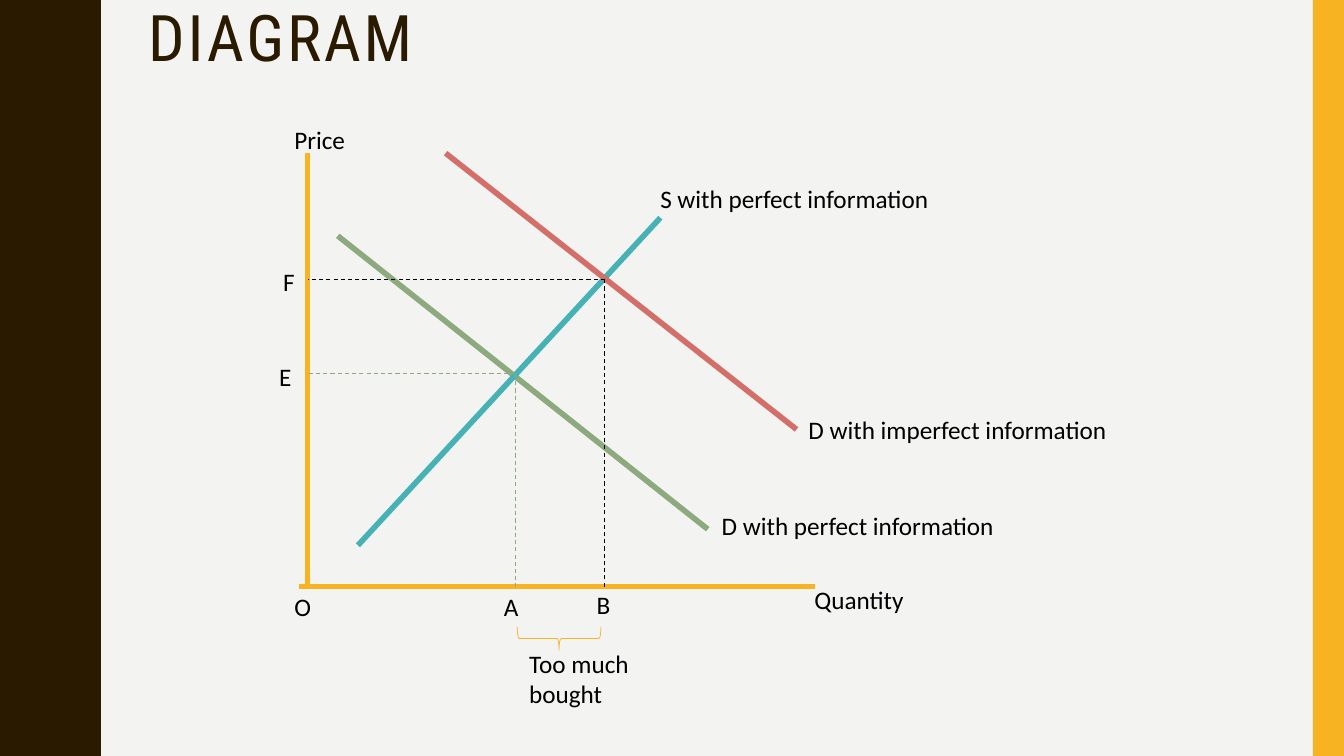
"""Build a supply and demand slide on information failure."""
import pptx
import pptx.dml.color
import pptx.enum.dml
import pptx.enum.shapes
import pptx.enum.text
import pptx.oxml.ns
import pptx.util
from lxml import etree

WIDTH, HEIGHT = 13.33, 7.5
BROWN, GOLD, GREEN, TEAL, RED, BLACK = (
    "2A1A00", "F8B323", "8CAA7E", "46B2B5", "D36F68", "000000")

AXIS_X, AXIS_Y = 3.05, 5.82
QUANTITY_A, QUANTITY_B = 5.11, 6.0
PRICE_E, PRICE_F = 3.71, 2.77

CURVES = [
    ((AXIS_X, 1.52), (AXIS_X, AXIS_Y), GOLD),
    ((2.97, AXIS_Y), (8.08, AXIS_Y), GOLD),
    ((3.35, 2.34), (7.02, 5.25), GREEN),
    ((3.55, 5.41), (6.55, 2.16), TEAL),
    ((4.42, 1.52), (7.9, 4.26), RED),
]
EQUILIBRIA = [(QUANTITY_A, PRICE_E, GREEN), (QUANTITY_B, PRICE_F, BLACK)]
LABELS = [
    ("Price", 2.82, 1.18, 1.71, 0.4),
    ("Quantity", 7.98, 5.75, 1.2, 0.4),
    ("O", 2.82, 5.82, 0.38, 0.4),
    ("D with perfect information", 7.06, 5.01, 3.09, 0.4),
    ("S with perfect information", 6.45, 1.77, 2.91, 0.4),
    ("D with imperfect information", 7.92, 4.06, 3.25, 0.4),
    ("E", 2.67, 3.54, 0.38, 0.4),
    ("A", 4.9, 5.82, 0.38, 0.4),
    ("F", 2.71, 2.59, 0.32, 0.4),
    ("B", 5.82, 5.8, 0.38, 0.4),
    ("Too much bought", 5.15, 6.38, 1.26, 0.71),
]
WAVE_COUNT, WAVE_LENGTH = 5, 1.5
HALF_WAVE = [
    (0.78, 0), (0.78, 0.07), (0.79, 0.14), (0.8, 0.2), (0.81, 0.25),
    (0.83, 0.29), (0.85, 0.33), (0.87, 0.38), (0.89, 0.42), (0.91, 0.46),
    (0.93, 0.5), (0.95, 0.55), (0.96, 0.61), (0.97, 0.68), (0.97, 0.75),
]


def inches(*values):
    """Convert numbers to lengths in inches."""
    return [pptx.util.Inches(value) for value in values]


def color(value):
    """Turn a hex string into a colour."""
    return pptx.dml.color.RGBColor.from_string(value)


def apply(target, values):
    """Set each named attribute on the target."""
    for name, value in values.items():
        setattr(target, name, value)


def paint(shape, value):
    """Give a shape a plain fill without outline or shadow."""
    shape.shadow.inherit = False
    shape.fill.solid()
    shape.fill.fore_color.rgb = color(value)
    shape.line.fill.background()


def add_line(page, start, end, value, line_format):
    """Draw a straight line without a shadow."""
    line = page.shapes.add_connector(
        pptx.enum.shapes.MSO_CONNECTOR.STRAIGHT, *inches(*start, *end))
    line.line.color.rgb = color(value)
    apply(line.line, line_format)
    etree.SubElement(line._element.spPr, pptx.oxml.ns.qn("a:effectLst"))


def add_background(page):
    """Draw the wavy left edge and the right band."""
    page.background.fill.solid()
    page.background.fill.fore_color.rgb = color("F3F3F2")
    mirrored = [(x, WAVE_LENGTH - y) for x, y in reversed(HALF_WAVE[:-1])]
    edge = [(x, y + wave * WAVE_LENGTH)
            for wave in range(WAVE_COUNT) for x, y in HALF_WAVE + mirrored]
    outline = page.shapes.build_freeform(0, 0, scale=pptx.util.Inches(1))
    outline.add_line_segments(edge + [(0, HEIGHT)], close=True)
    paint(outline.convert_to_shape(), BROWN)
    band = page.shapes.add_shape(
        pptx.enum.shapes.MSO_SHAPE.RECTANGLE,
        *inches(WIDTH - 0.31, 0, 0.31, HEIGHT))
    paint(band, GOLD)


def add_title(page):
    """Fill and place the title placeholder."""
    title = page.shapes.title
    left, top, width, height = inches(1.37, 0, 11.13, 0.8)
    apply(title, {"left": left, "top": top, "width": width, "height": height})
    apply(title.text_frame, {
        "word_wrap": True,
        "auto_size": pptx.enum.text.MSO_AUTO_SIZE.NONE,
        "vertical_anchor": pptx.enum.text.MSO_ANCHOR.MIDDLE})
    para = title.text_frame.paragraphs[0]
    apply(para, {"alignment": pptx.enum.text.PP_ALIGN.LEFT, "line_spacing": 0.9})
    span = para.add_run()
    span.text = "DIAGRAM"
    apply(span.font, {"name": "Roboto Condensed", "size": pptx.util.Pt(45.9)})
    span.font.color.rgb = color(BROWN)
    span._r.get_or_add_rPr().set("spc", "200")


def add_label(page, text, *place):
    """Add one diagram label."""
    box = page.shapes.add_textbox(*inches(*place))
    apply(box.text_frame, {
        "word_wrap": True,
        "auto_size": pptx.enum.text.MSO_AUTO_SIZE.SHAPE_TO_FIT_TEXT})
    span = box.text_frame.paragraphs[0].add_run()
    span.text = text
    apply(span.font, {"name": "Calibri", "size": pptx.util.Pt(18)})
    span.font.color.rgb = color(BLACK)


def add_brace(page):
    """Draw the brace that spans the excess quantity."""
    brace = page.shapes.add_shape(
        pptx.enum.shapes.MSO_SHAPE.RIGHT_BRACE, *inches(5.43, 5.92, 0.23, 0.83))
    brace.rotation = 90
    brace.shadow.inherit = False
    brace.fill.background()
    brace.line.color.rgb = color(GOLD)
    brace.line.width = pptx.util.Pt(0.5)


def main():
    """Assemble and save the deck."""
    deck = pptx.Presentation()
    deck.slide_width, deck.slide_height = inches(WIDTH, HEIGHT)
    page = deck.slides.add_slide(deck.slide_layouts.get_by_name("Title Only"))
    add_background(page)
    add_title(page)
    for start, end, value in CURVES:
        add_line(page, start, end, value, {"width": pptx.util.Pt(4)})
    dashed = {"width": pptx.util.Pt(0.75),
              "dash_style": pptx.enum.dml.MSO_LINE.DASH}
    for quantity, price, value in EQUILIBRIA:
        for foot in ((AXIS_X, price), (quantity, AXIS_Y)):
            add_line(page, (quantity, price), foot, value, dashed)
    for label in LABELS:
        add_label(page, *label)
    add_brace(page)
    deck.save("out.pptx")


if __name__ == "__main__":
    main()
